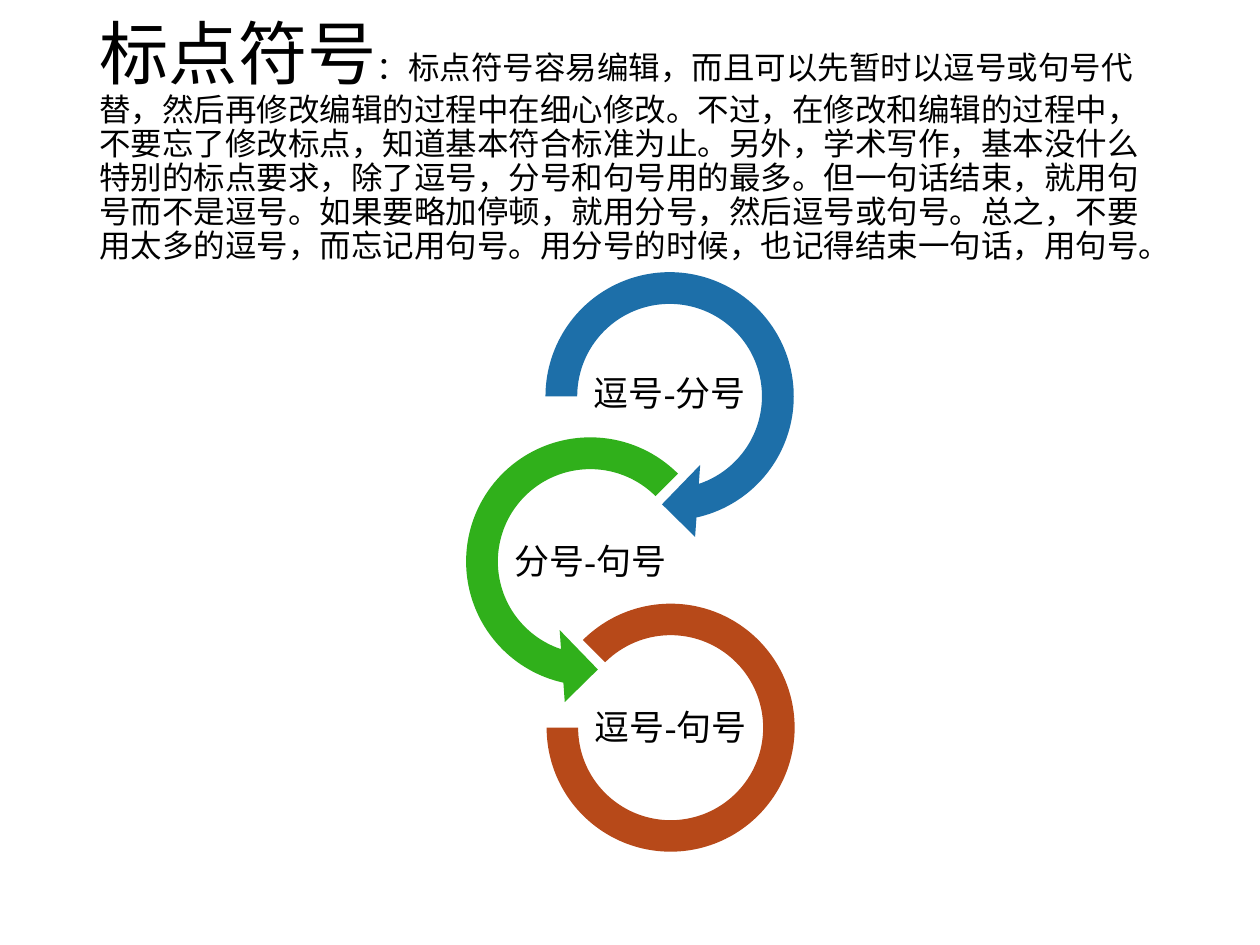
import dataclasses
import pptx
import pptx.dml.color
import pptx.enum.shapes
import pptx.enum.text
import pptx.slide
import pptx.text.text
import pptx.util

Cm = pptx.util.Cm
Pt = pptx.util.Pt
RGB = pptx.dml.color.RGBColor
Kind = pptx.enum.shapes.MSO_SHAPE
Align = pptx.enum.text.PP_ALIGN

BLACK = RGB(0x00, 0x00, 0x00)
BLUE = RGB(0x1D, 0x6F, 0xA9)
GREEN = RGB(0x30, 0xB0, 0x1B)
RUST = RGB(0xB7, 0x49, 0x19)
FONT = "Times New Roman"

HEAD = "标点符号"
BODY = (
    "：标点符号容易编辑，而且可以先暂时以逗号或句号代替，然后再修改编辑的过程中在细心修改。"
    "不过，在修改和编辑的过程中，不要忘了修改标点，知道基本符合标准为止。"
    "另外，学术写作，基本没什么特别的标点要求，除了逗号，分号和句号用的最多。"
    "但一句话结束，就用句号而不是逗号。如果要略加停顿，就用分号，然后逗号或句号。"
    "总之，不要用太多的逗号，而忘记用句号。用分号的时候，也记得结束一句话，用句号。"
)


@dataclasses.dataclass
class Ring:
    kind: Kind
    left: float
    top: float
    size: float
    turns: tuple[float, ...]
    fill: RGB
    label: str
    text_top: float


RINGS = [
    Ring(Kind.CIRCULAR_ARROW, 10.59, 5.08, 5.82,
         (0.11, 11.42, 45, 108, 0.125), BLUE, "逗号-分号", 7.16),
    Ring(Kind.LEFT_CIRCULAR_ARROW, 8.99, 8.41, 5.82,
         (0.11, 11.42, 63, 189, 0.125), GREEN, "分号-句号", 10.54),
    Ring(Kind.BLOCK_ARC, 11.02, 12.17, 5.0,
         (135, 108, 0.127), RUST, "逗号-句号", 13.89),
]
LABEL_WIDTH = 3.23
LABEL_HEIGHT = 1.63


def add_run(para: pptx.text.text._Paragraph, text: str, size: float) -> None:
    run = para.add_run()
    run.text = text
    run.font.name = FONT
    run.font.size = Pt(size)
    run.font.color.rgb = BLACK


def set_frame(frame: pptx.text.text.TextFrame, align: Align) -> pptx.text.text._Paragraph:
    frame.word_wrap = True
    frame.auto_size = pptx.enum.text.MSO_AUTO_SIZE.NONE
    frame.vertical_anchor = pptx.enum.text.MSO_ANCHOR.MIDDLE
    para = frame.paragraphs[0]
    para.alignment = align
    para.line_spacing = 0.9
    return para


def add_title(slide: pptx.slide.Slide) -> None:
    title = slide.shapes.title
    title.left, title.top = Cm(1.75), Cm(1.02)
    title.width, title.height = Cm(21.89), Cm(3.68)
    para = set_frame(title.text_frame, Align.LEFT)
    add_run(para, HEAD, 39.6)
    add_run(para, BODY, 18)


def add_ring(slide: pptx.slide.Slide, ring: Ring) -> None:
    shape = slide.shapes.add_shape(
        ring.kind, Cm(ring.left), Cm(ring.top), Cm(ring.size), Cm(ring.size))
    shape.shadow.inherit = False
    shape.fill.solid()
    shape.fill.fore_color.rgb = ring.fill
    shape.line.fill.background()
    for i, turn in enumerate(ring.turns):
        shape.adjustments[i] = turn

    left = ring.left + (ring.size - LABEL_WIDTH) / 2
    box = slide.shapes.add_textbox(
        Cm(left), Cm(ring.text_top), Cm(LABEL_WIDTH), Cm(LABEL_HEIGHT))
    frame = box.text_frame
    frame.margin_left = frame.margin_right = Cm(0.03)
    frame.margin_top = frame.margin_bottom = Cm(0.03)
    add_run(set_frame(frame, Align.CENTER), ring.label, 20)


def main() -> None:
    deck = pptx.Presentation()
    deck.slide_width, deck.slide_height = Cm(25.4), Cm(19.05)
    slide = deck.slides.add_slide(deck.slide_layouts[5])
    add_title(slide)
    for ring in RINGS:
        add_ring(slide, ring)
    deck.save("out.pptx")


if __name__ == "__main__":
    main()
